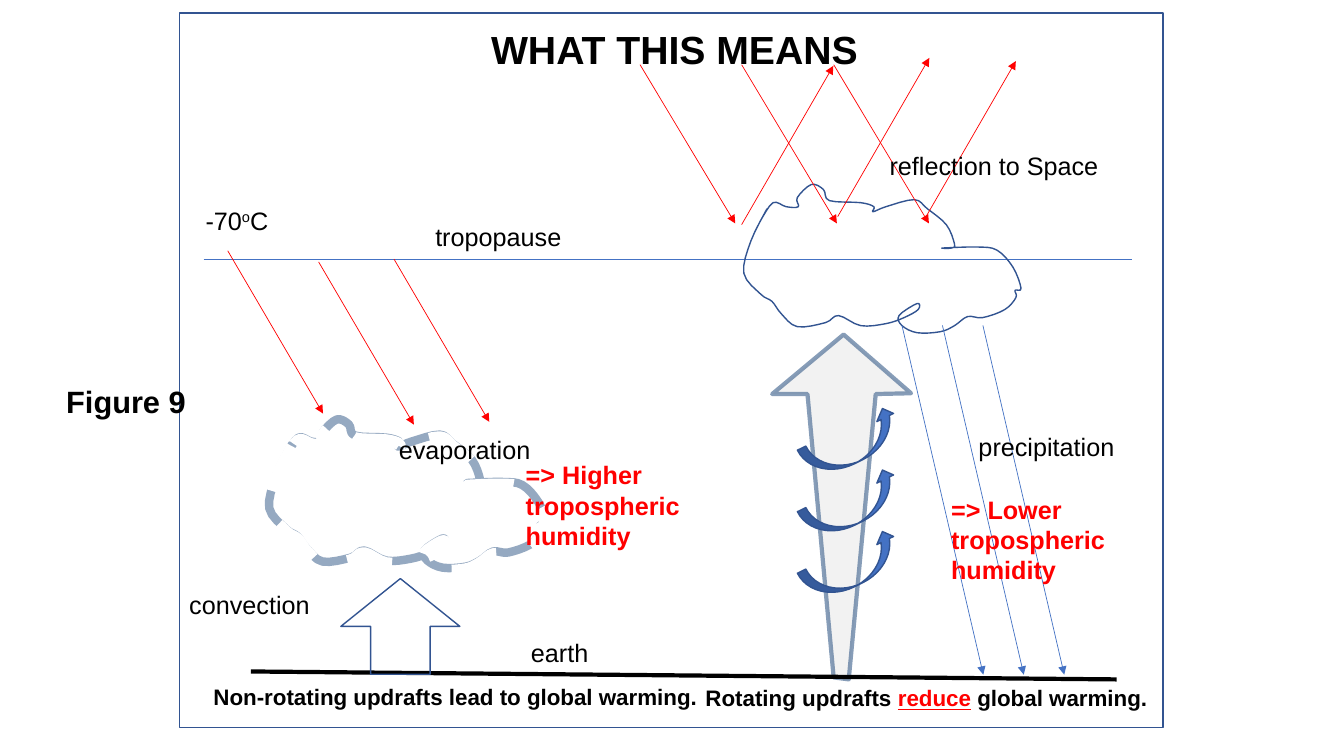
from lxml import etree
from pptx import Presentation
from pptx.dml.color import RGBColor
from pptx.enum import dml, shapes, text
from pptx.oxml import ns
from pptx.util import Cm, Pt

BLACK = RGBColor(0x00, 0x00, 0x00)
WHITE = RGBColor(0xFF, 0xFF, 0xFF)
RED = RGBColor(0xFF, 0x00, 0x00)
BLUE = RGBColor(0x44, 0x72, 0xC4)
NAVY = RGBColor(0x32, 0x54, 0x91)
STEEL = RGBColor(0x38, 0x5D, 0x8A)
PALE = RGBColor(0xF2, 0xF2, 0xF2)

# Points on the rim of a cloud, in hundredths of an inch from its top left corner
RIM_UNIT = Cm(0.0254)
RIM = [
    (24, 24), (8, 56), (1, 88), (18, 109), (29, 116), (38, 128), (54, 141), (82, 137),
    (95, 130), (117, 140), (142, 138), (160, 132), (174, 124), (173, 118), (155, 130),
    (158, 140), (173, 147), (196, 146), (210, 140), (223, 131), (238, 132), (260, 124),
    (271, 112), (270, 105), (276, 103), (268, 82), (252, 65), (232, 62), (198, 63),
    (207, 63), (210, 59), (202, 40), (183, 24), (170, 15), (142, 22), (129, 27),
    (130, 22), (117, 18), (86, 16), (80, 5), (68, 0), (54, 13), (55, 22), (43, 22),
    (30, 18), (18, 35),
]
UPDRAFT = [(19.46, 9.93), (21.26, 8.43), (22.96, 9.91), (22.07, 9.93),
           (21.39, 17.12), (21.01, 17.07), (20.35, 9.93)]

# Each bundle of rays: colour, shared run (right, down), starting points
RAY_BUNDLES = [
    (RED, (2.4, 4.1), [(5.74, 6.32), (8.03, 6.6), (9.93, 6.53)]),
    (RED, (2.4, 4), [(16.13, 1.63), (18.69, 1.63), (21.01, 1.63)]),
    (RED, (2.31, -4), [(18.69, 5.66), (21.11, 5.46), (23.29, 5.54)]),
    (BLUE, (2.05, 8.8), [(22.73 + 1.02 * drop, 8.2) for drop in range(3)]),
]

PLAIN = {"size": Pt(18), "bold": False}
CAPTION = {"size": Pt(16), "bold": True}
OUTCOME = {"size": Pt(18), "bold": True, "color": RED}
FIGURE = {"size": Pt(22), "bold": True}
# Left, top, width, base format, runs
LABELS = [
    (10.72, 5.44, 6, PLAIN, [("tropopause", {})]),
    (13.13, 15.93, 3, PLAIN, [("earth", {})]),
    (4.52, 14.73, 4.06, PLAIN, [("convection", {})]),
    (4.93, 5.05, 3.1, PLAIN, [("-70", {}), ("o", {"raised": True}), ("C", {})]),
    (22.17, 3.66, 7, PLAIN, [("reflection to Space", {})]),
    (24.41, 10.74, 4.06, PLAIN, [("precipitation", {})]),
    (9.8, 10.82, 4.06, PLAIN, [("evaporation", {})]),
    (5.13, 17.09, 12.75, CAPTION, [("Non-rotating updrafts lead to global warming.", {})]),
    (17.53, 17.12, 11.81, CAPTION,
     [("Rotating updrafts ", {}), ("reduce", {"color": RED, "underline": True}),
      (" global warming.", {})]),
    (13, 11.46, 6.71, OUTCOME, [("=> Higher tropospheric humidity", {})]),
    (23.72, 12.32, 5.31, OUTCOME, [("=> Lower tropospheric humidity", {})]),
    (1.42, 9.53, 5.61, FIGURE, [("Figure 9", {})]),
]


def lengths(values):
    return [Cm(value) for value in values]


def paint(shape, line, width, fill=None, opacity=None):
    shape.shadow.inherit = False
    if fill is None:
        shape.fill.background()
    else:
        shape.fill.solid()
        shape.fill.fore_color.rgb = fill
    shape.line.color.rgb = line
    shape.line.width = Pt(width)
    if opacity:
        tint = shape._element.xpath(".//a:ln//a:srgbClr")[0]
        etree.SubElement(tint, ns.qn("a:alpha")).set("val", str(opacity * 1000))


def preset(page, kind, place, **look):
    shape = page.shapes.add_shape(kind, *lengths(place))
    paint(shape, **look)
    return shape


def outline(page, points, close, **look):
    builder = page.shapes.build_freeform(*points[0])
    builder.add_line_segments(points[1:], close=close)
    shape = builder.convert_to_shape()
    paint(shape, **look)
    return shape


def smooth(points, steps=4):
    """Run a Catmull-Rom curve through the points."""
    padded = [points[0], *points, points[-1]]
    curve = [points[0]]
    for a, b, c, d in zip(padded, padded[1:], padded[2:], padded[3:]):
        for step in range(1, steps + 1):
            t = step / steps
            curve.append(tuple(
                q + t * (r - p + t * (2 * p - 5 * q + 4 * r - s
                                      + t * (3 * (q - r) + s - p))) / 2
                for p, q, r, s in zip(a, b, c, d)))
    return curve


def cloud(page, left, top, **look):
    points = [(int(Cm(left) + x * RIM_UNIT), int(Cm(top) + y * RIM_UNIT))
              for x, y in smooth(RIM)]
    return outline(page, points, False, **look)


def line(page, ends, color, width, arrow=False):
    connector = page.shapes.add_connector(shapes.MSO_CONNECTOR.STRAIGHT, *lengths(ends))
    connector.line.color.rgb = color
    connector.line.width = Pt(width)
    properties = connector._element.spPr
    if arrow:
        stroke = properties.find(ns.qn("a:ln"))
        etree.SubElement(stroke, ns.qn("a:tailEnd")).set("type", "triangle")
    etree.SubElement(properties, ns.qn("a:effectLst"))


def write(box, base, spans):
    frame = box.text_frame
    frame.word_wrap = True
    frame.vertical_anchor = text.MSO_ANCHOR.TOP
    para = frame.paragraphs[0]
    for words, extra in spans:
        span = para.add_run()
        span.text = words
        values = {"name": "Arial", "color": BLACK, **base, **extra}
        span.font.color.rgb = values.pop("color")
        if values.pop("raised", False):
            span._r.get_or_add_rPr().set("baseline", "30000")
        for name, value in values.items():
            setattr(span.font, name, value)
    return para


def title(page, place, words):
    box = page.shapes.title
    box.left, box.top, box.width, box.height = lengths(place)
    para = write(box, {"size": Pt(28), "bold": True}, [(words, {})])
    para.alignment = text.PP_ALIGN.CENTER


def main():
    deck = Presentation()
    deck.slide_width, deck.slide_height = Cm(33.87), Cm(19.05)
    page = deck.slides.add_slide(deck.slide_layouts[5])
    kinds = shapes.MSO_SHAPE

    title(page, (6.76, 0.51, 20.47, 1.45), "WHAT THIS MEANS")
    outline(page, [lengths(point) for point in UPDRAFT], True,
            line=STEEL, width=3, fill=PALE, opacity=60)
    preset(page, kinds.RECTANGLE, (4.52, 0.33, 24.79, 18.01), line=NAVY, width=1)
    line(page, (6.32, 16.92, 28.14, 17.12), BLACK, 3)
    line(page, (5.13, 6.53, 28.52, 6.53), BLUE, 0.5)

    cloud(page, 6.76, 10.57, line=STEEL, width=6, opacity=53)
    preset(page, kinds.UP_ARROW, (8.59, 14.58, 3, 2.41), line=NAVY, width=1)
    cloud(page, 18.72, 4.65, line=NAVY, width=1)
    for color, (right, down), starts in RAY_BUNDLES:
        for x, y in starts:
            line(page, (x, y, x + right, y + down), color, 0.5, arrow=True)
    gaps = cloud(page, 6.76, 10.64, line=WHITE, width=8.75)
    gaps.line.dash_style = dml.MSO_LINE.DASH

    for left, top, width, base, spans in LABELS:
        height = 2.57 if base is OUTCOME else 1.02
        write(page.shapes.add_textbox(*lengths((left, top, width, height))), base, spans)
    for turn in range(3):
        swirl = preset(page, kinds.CURVED_UP_ARROW, (20.17, 10.72 + 1.55 * turn, 2.62, 0.94),
                       line=NAVY, width=1, fill=BLUE)
        swirl.rotation = 333.9
    deck.save("out.pptx")


if __name__ == "__main__":
    main()
